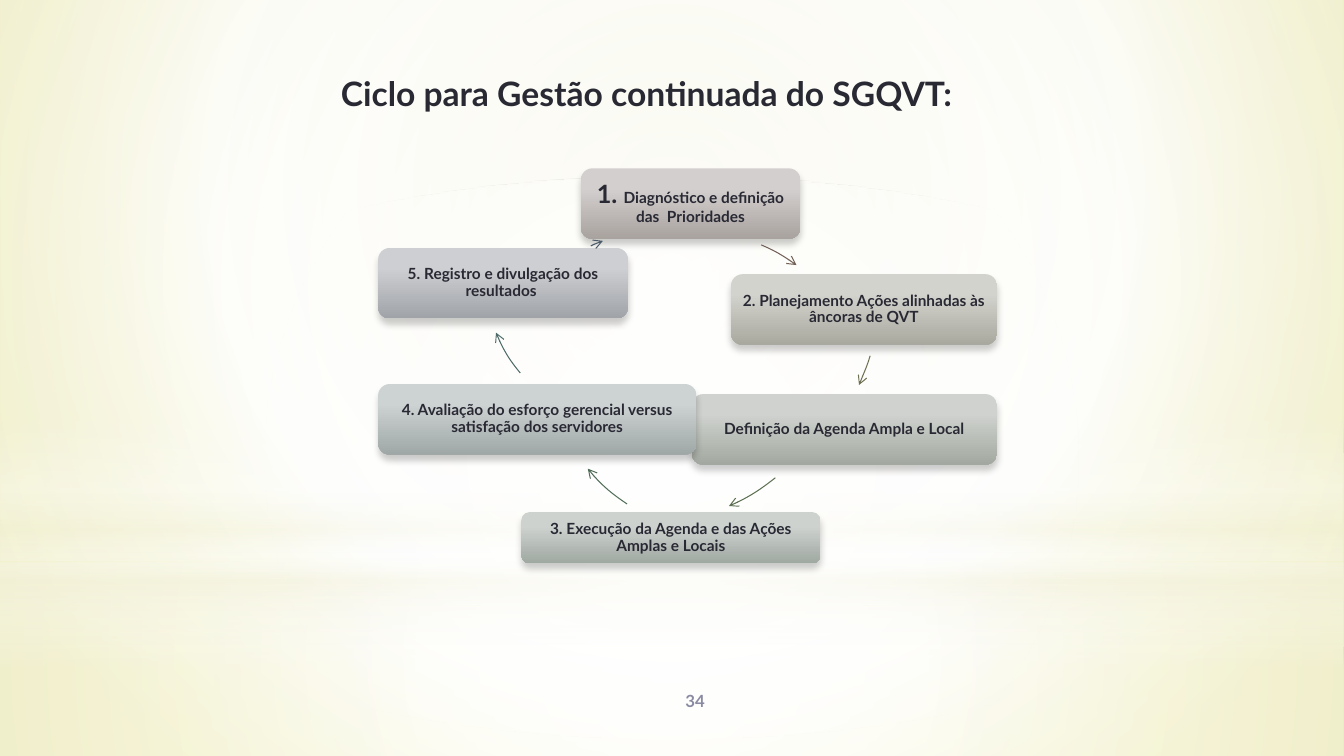
from lxml.etree import SubElement as Sub
from pptx import Presentation
from pptx.dml.color import RGBColor
from pptx.enum.shapes import MSO_SHAPE as Kind
from pptx.enum.text import MSO_ANCHOR as Anchor, MSO_AUTO_SIZE as Auto, PP_ALIGN as Align
from pptx.oxml.ns import qn
from pptx.util import Inches, Pt

TITLE = "Ciclo para Gestão continuada do SGQVT:"
PAGE = "34"

# number run, text, (left, top, width, height), (light, dark),
# arrow frame corner, arrow curve, arrow colour
STEPS = [
    ("1. ", "Diagnóstico e definição das  Prioridades", (5.76, 1.67, 2.18, 0.7), ("D3CFCE", "A9A3A0"),
     (5.21, 2.28), [(7.55, 2.43), (7.67, 2.48), (7.79, 2.55), (7.9, 2.63)], "726056"),
    ("", "2. Planejamento Ações alinhadas às âncoras de QVT", (7.25, 2.72, 2.64, 0.7), ("D3D3CE", "A9A9A0"),
     (5.39, 1.41), [(8.63, 3.53), (8.6, 3.63), (8.56, 3.72), (8.52, 3.82)], "707054"),
    ("", "Definição da Agenda Ampla e Local", (6.86, 3.91, 3.03, 0.7), ("CFD2CE", "A3A9A0"),
     (4.94, 1.84), [(7.69, 4.74), (7.55, 4.85), (7.4, 4.95), (7.23, 5.02)], "5D6F52"),
    ("", "3. Execução da Agenda e das Ações Amplas e Locais", (5.17, 5.08, 2.97, 0.51), ("CDD2CF", "A0A8A2"),
     (5.45, 1.95), [(6.22, 5), (6.07, 4.9), (5.94, 4.79), (5.83, 4.65)], "506D58"),
    ("", "4. Avaliação do esforço gerencial versus satisfação dos servidores", (3.75, 3.81, 3.16, 0.7),
     ("CDD2D2", "A0A8A7"),
     (4.78, 0.99), [(5.16, 3.7), (5.06, 3.58), (4.98, 3.45), (4.92, 3.3)], "4E6C69"),
    ("", "5. Registro e divulgação dos resultados ", (3.75, 2.46, 2.48, 0.7), ("CDCFD2", "A0A3A8"),
     (4.91, 2.28), [(5.86, 2.44), (5.9, 2.42), (5.94, 2.4), (5.98, 2.39)], "4C5A6A"),
]
RING = 3.31  # side of every arrow's frame

THEME = {
    "font": "Lato", "ink": "292934", "page": "8A8AA3", "shade": "000000",
    "title": 24, "number": 18, "step": 11, "foot": 12, "line": 0.75,
}
CENTER = (50, 50, 50, 50)
DOWN = 90

# Gradient stops: position %, colour, opacity %
BACK = [(0, "EFEDCC", 100), (60, "FFFFFF", 100), (100, "E9E58A", 100)]
LAYERS = [
    (Kind.RECTANGLE, (0, 5.58, 13.33, 1.92),
     [(0, "FFFFFF", 91), (37, "FFFFFF", 76), (100, "F3F2DC", 79)], CENTER),
    (Kind.RECTANGLE, (0, 0, 13.33, 5.58),
     [(0, "FFFFFF", 89), (48, "FFFFFF", 62), (100, "F3F2DC", 79)], CENTER),
    (Kind.RECTANGLE, (0, 4.12, 13.33, 2.5),
     [(0, "FFFFFF", 0), (29, "FFFFFF", 30), (45, "F3F2DC", 40), (55, "FFFFFF", 26),
      (65, "F3F2DC", 60), (100, "FFFFFF", 0)], DOWN),
    (Kind.OVAL, (0, 1.75, 13.33, 5.58), [(0, "FFFFFF", 100), (56, "FFFFFF", 0)], CENTER),
]


def add_color(node, color, alpha):
    tint = Sub(node, qn("a:srgbClr"), val=color)
    if alpha < 100:
        Sub(tint, qn("a:alpha"), val=str(alpha * 1000))


def paint(fill, root, stops, way):
    """Fill with a gradient; way is an angle or the four insets of a circular one."""
    fill.gradient()
    grad = next(root.iter(qn("a:gradFill")))
    for child in list(grad):
        grad.remove(child)
    grad.set("rotWithShape", "1")
    group = Sub(grad, qn("a:gsLst"))
    for pos, color, alpha in stops:
        add_color(Sub(group, qn("a:gs"), pos=str(pos * 1000)), color, alpha)
    if isinstance(way, tuple):
        circle = Sub(grad, qn("a:path"), path="circle")
        Sub(circle, qn("a:fillToRect"), {side: str(v * 1000) for side, v in zip("ltrb", way)})
    else:
        Sub(grad, qn("a:lin"), ang=str(way * 60000), scaled="0")


def add_plate(slide, kind, area, stops, way):
    plate = slide.shapes.add_shape(kind, *map(Inches, area))
    plate.shadow.inherit = False
    plate.line.fill.background()
    paint(plate.fill, plate._element.spPr, stops, way)
    return plate


def style(run, size, color):
    font = run.font
    font.name, font.size, font.bold = THEME["font"], Pt(size), True
    font.color.rgb = RGBColor.from_string(color)


def add_step(slide, number, text, area, tones):
    light, dark = tones
    box = add_plate(slide, Kind.ROUNDED_RECTANGLE, area, [(28, light, 100), (100, dark, 100)], DOWN)
    cast = Sub(box._element.spPr.find(qn("a:effectLst")), qn("a:outerShdw"), blurRad=str(Pt(5)),
               dist=str(Pt(4)), dir=str(DOWN * 60000), rotWithShape="0")
    add_color(cast, THEME["shade"], 20)
    frame = box.text_frame
    frame.word_wrap, frame.vertical_anchor = True, Anchor.MIDDLE
    pad = Inches(0.07 if number else 0.05)
    frame.margin_left = frame.margin_right = frame.margin_top = frame.margin_bottom = pad
    para = frame.paragraphs[0]
    para.alignment, para.line_spacing = Align.CENTER, 0.9
    for words, size in ((number, THEME["number"]), (text, THEME["step"])):
        if words:
            run = para.add_run()
            run.text = words
            style(run, size, THEME["ink"])


def add_arrow(slide, corner, curve, color):
    """Draw a Bézier arrow inside a square frame that is larger than the curve."""
    points = [tuple(Inches(v - base) for v, base in zip(p, corner)) for p in curve]
    pen = slide.shapes.build_freeform(*points[0])
    pen.add_line_segments(points[1:], close=False)
    arrow = pen.convert_to_shape()
    arrow.left, arrow.top = map(Inches, corner)
    arrow.width = arrow.height = Inches(RING)

    track = next(arrow._element.iter(qn("a:path")))
    for child in list(track):
        track.remove(child)
    track.set("w", str(Inches(RING)))
    track.set("h", str(Inches(RING)))
    for tag, group in (("a:moveTo", points[:1]), ("a:cubicBezTo", points[1:])):
        node = Sub(track, qn(tag))
        for x, y in group:
            Sub(node, qn("a:pt"), x=str(x), y=str(y))

    arrow.shadow.inherit = False
    arrow.fill.background()
    arrow.line.width = Pt(THEME["line"])
    arrow.line.color.rgb = RGBColor.from_string(color)
    Sub(arrow.line._get_or_add_ln(), qn("a:tailEnd"), type="arrow")


def set_line(shape, text, size, color, align, anchor):
    frame = shape.text_frame
    frame.text = text
    frame.auto_size, frame.vertical_anchor = Auto.NONE, anchor
    para = frame.paragraphs[0]
    para.alignment = align
    style(para.runs[0], size, color)


def main():
    deck = Presentation()
    deck.slide_width, deck.slide_height = Inches(13.33), Inches(7.5)
    slide = deck.slides.add_slide(deck.slide_layouts[5])
    paint(slide.background.fill, slide._element, BACK, (20, 10, 20, 60))
    for layer in LAYERS:
        add_plate(slide, *layer)

    foot = slide.shapes.add_textbox(*map(Inches, (5.56, 6.75, 2.67, 0.4)))
    foot.text_frame.word_wrap = True
    set_line(foot, PAGE, THEME["foot"], THEME["page"], Align.CENTER, Anchor.MIDDLE)

    for number, text, area, tones, corner, curve, color in STEPS:
        add_step(slide, number, text, area, tones)
        add_arrow(slide, corner, curve, color)

    title = slide.shapes.title
    title.left, title.top, title.width, title.height = map(Inches, (3.28, 0.67, 6.5, 0.5))
    title.text_frame.word_wrap = False
    set_line(title, TITLE, THEME["title"], THEME["ink"], Align.LEFT, Anchor.TOP)
    slide.shapes._spTree.append(title._element)  # bring to front
    deck.save("out.pptx")


if __name__ == "__main__":
    main()
